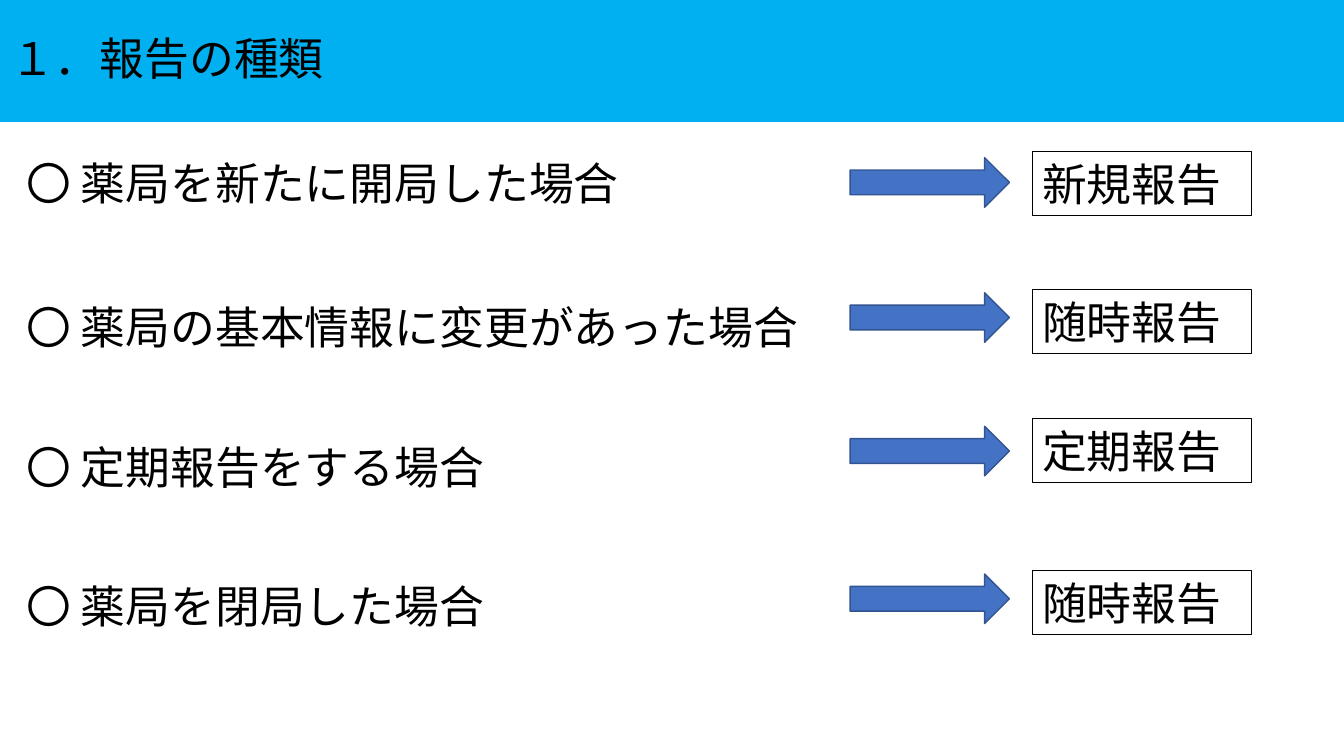
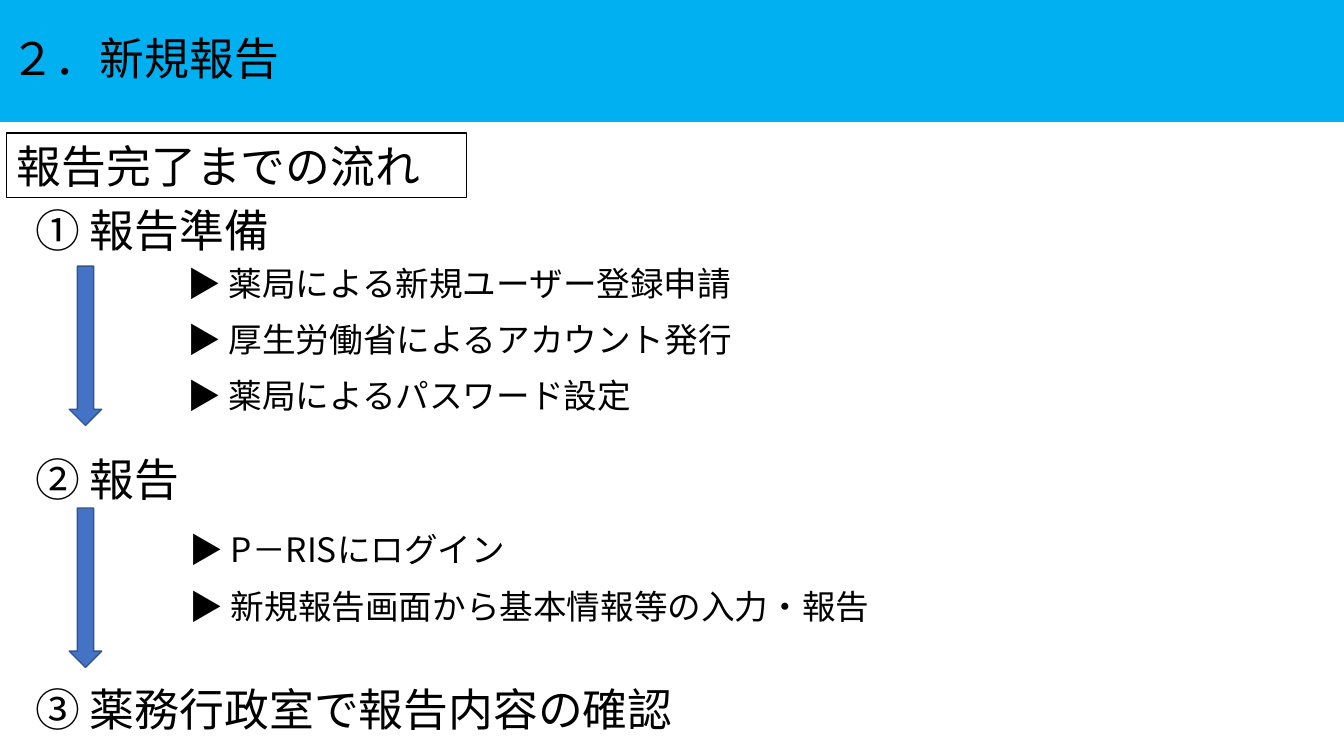
from dataclasses import dataclass

import pptx
import pptx.dml.color
import pptx.enum.shapes
import pptx.enum.text
import pptx.oxml
import pptx.oxml.ns
import pptx.presentation
import pptx.shapes.autoshape
import pptx.shapes.base
import pptx.slide
import pptx.text.text
import pptx.util

Pt = pptx.util.Pt
Preset = pptx.enum.shapes.MSO_SHAPE

COLOURS = {"band": "00B0F0", "arrow": "4472C4", "arrow_edge": "325491", "ink": "000000"}
FONT = "Noto Sans CJK JP"
SLIDE_WIDTH, SLIDE_HEIGHT = 960, 540
BAND_HEIGHT = 87
LARGE, SMALL = 32, 24
LARGE_HEIGHT, SMALL_HEIGHT = 46, 36
ARROW_LENGTH = 113.8
STEP_PITCH = 40.1


@dataclass(frozen=True)
class Case:
    text: str
    report: str
    text_top: float
    arrow_top: float
    report_top: float


@dataclass(frozen=True)
class Stage:
    heading: str
    top: float
    arrow_top: float = 0
    steps: tuple[str, ...] = ()
    steps_left: float = 0
    steps_top: float = 0


CASES = (
    Case("〇 薬局を新たに開局した場合", "新規報告", 107.3, 112.6, 108),
    Case("〇 薬局の基本情報に変更があった場合", "随時報告", 210.2, 209.1, 206.6),
    Case("〇 定期報告をする場合", "定期報告", 310.3, 304.5, 298.8),
    Case("〇 薬局を閉局した場合", "随時報告", 409.7, 410, 407.5),
)

STAGES = (
    Stage("① 報告準備", 141.1, 190.1,
          ("▶ 薬局による新規ユーザー登録申請",
           "▶ 厚生労働省によるアカウント発行",
           "▶ 薬局によるパスワード設定"), 126.9, 184.3),
    Stage("② 報告", 318.5, 362.9,
          ("▶ P－RISにログイン",
           "▶ 新規報告画面から基本情報等の入力・報告"), 128.5, 374.5),
    Stage("③ 薬務行政室で報告内容の確認", 483.2),
)


def rgb(name: str) -> pptx.dml.color.RGBColor:
    return pptx.dml.color.RGBColor.from_string(COLOURS[name])


def place(shape: pptx.shapes.base.BaseShape, left: float, top: float,
          width: float, height: float) -> None:
    shape.left, shape.top, shape.width, shape.height = map(Pt, (left, top, width, height))


def write(frame: pptx.text.text.TextFrame, text: str, *, size: float = LARGE,
          colour: str = "ink", line_spacing: float = 1.0) -> None:
    """Fill a frame with one left-aligned, vertically centred paragraph."""
    frame.word_wrap = True
    frame.auto_size = pptx.enum.text.MSO_AUTO_SIZE.NONE
    frame.vertical_anchor = pptx.enum.text.MSO_ANCHOR.MIDDLE
    para = frame.paragraphs[0]
    para.alignment = pptx.enum.text.PP_ALIGN.LEFT
    para.line_spacing = line_spacing
    span = para.add_run()
    span.text = text
    span.font.size = Pt(size)
    span.font.color.rgb = rgb(colour)
    span.font.name = FONT
    # python-pptx sets only the Latin typeface
    east_asian = pptx.oxml.parse_xml(
        f'<a:ea {pptx.oxml.ns.nsdecls("a")} typeface="{FONT}"/>')
    span.font._element.append(east_asian)


def add_text(page: pptx.slide.Slide, text: str, left: float, top: float, width: float,
             *, height: float = LARGE_HEIGHT, size: float = LARGE) -> None:
    box = page.shapes.add_textbox(Pt(left), Pt(top), Pt(width), Pt(height))
    write(box.text_frame, text, size=size)


def add_preset(page: pptx.slide.Slide, preset: Preset, left: float, top: float,
               width: float, height: float, *, line: str, line_width: float,
               fill: str | None = None) -> pptx.shapes.autoshape.Shape:
    shape = page.shapes.add_shape(preset, Pt(left), Pt(top), Pt(width), Pt(height))
    shape.shadow.inherit = False
    if fill:
        shape.fill.solid()
        shape.fill.fore_color.rgb = rgb(fill)
    else:
        shape.fill.background()
    shape.line.color.rgb = rgb(line)
    shape.line.width = Pt(line_width)
    return shape


def add_framed_text(page: pptx.slide.Slide, text: str, left: float, top: float,
                    width: float) -> None:
    box = add_preset(page, Preset.RECTANGLE, left, top, width, LARGE_HEIGHT,
                     line="ink", line_width=0.75)
    write(box.text_frame, text)


def add_arrow(page: pptx.slide.Slide, preset: Preset, left: float, top: float,
              width: float, height: float) -> None:
    add_preset(page, preset, left, top, width, height,
               fill="arrow", line="arrow_edge", line_width=1)


def add_page(deck: pptx.presentation.Presentation, title: str) -> pptx.slide.Slide:
    """Add a slide whose title placeholder is the coloured top band."""
    page = deck.slides.add_slide(deck.slide_layouts.get_by_name("Title Only"))
    band = page.shapes.title
    place(band, 0, 0, SLIDE_WIDTH, BAND_HEIGHT)
    band.fill.solid()
    band.fill.fore_color.rgb = rgb("band")
    write(band.text_frame, title, line_spacing=0.9)
    return page


def build_report_types(deck: pptx.presentation.Presentation) -> None:
    page = add_page(deck, "１．報告の種類")
    for case in CASES:
        add_text(page, case.text, 11.5, case.text_top, 575)
        add_arrow(page, Preset.RIGHT_ARROW, 607.2, case.arrow_top, ARROW_LENGTH, 35.4)
        add_framed_text(page, case.report, 737.3, case.report_top, 156.4)


def build_new_report(deck: pptx.presentation.Presentation) -> None:
    page = add_page(deck, "２．新規報告")
    add_framed_text(page, "報告完了までの流れ", 5, 95, 328.3)
    for stage in STAGES:
        add_text(page, stage.heading, 18, stage.top, 630)
        for index, step in enumerate(stage.steps):
            add_text(page, step, stage.steps_left, stage.steps_top + index * STEP_PITCH,
                     630, height=SMALL_HEIGHT, size=SMALL)
        if stage.steps:
            add_arrow(page, Preset.DOWN_ARROW, 49.5, stage.arrow_top, 23.2, ARROW_LENGTH)


def main() -> None:
    deck = pptx.Presentation()
    deck.slide_width, deck.slide_height = Pt(SLIDE_WIDTH), Pt(SLIDE_HEIGHT)
    build_report_types(deck)
    build_new_report(deck)
    deck.save("out.pptx")


if __name__ == "__main__":
    main()
